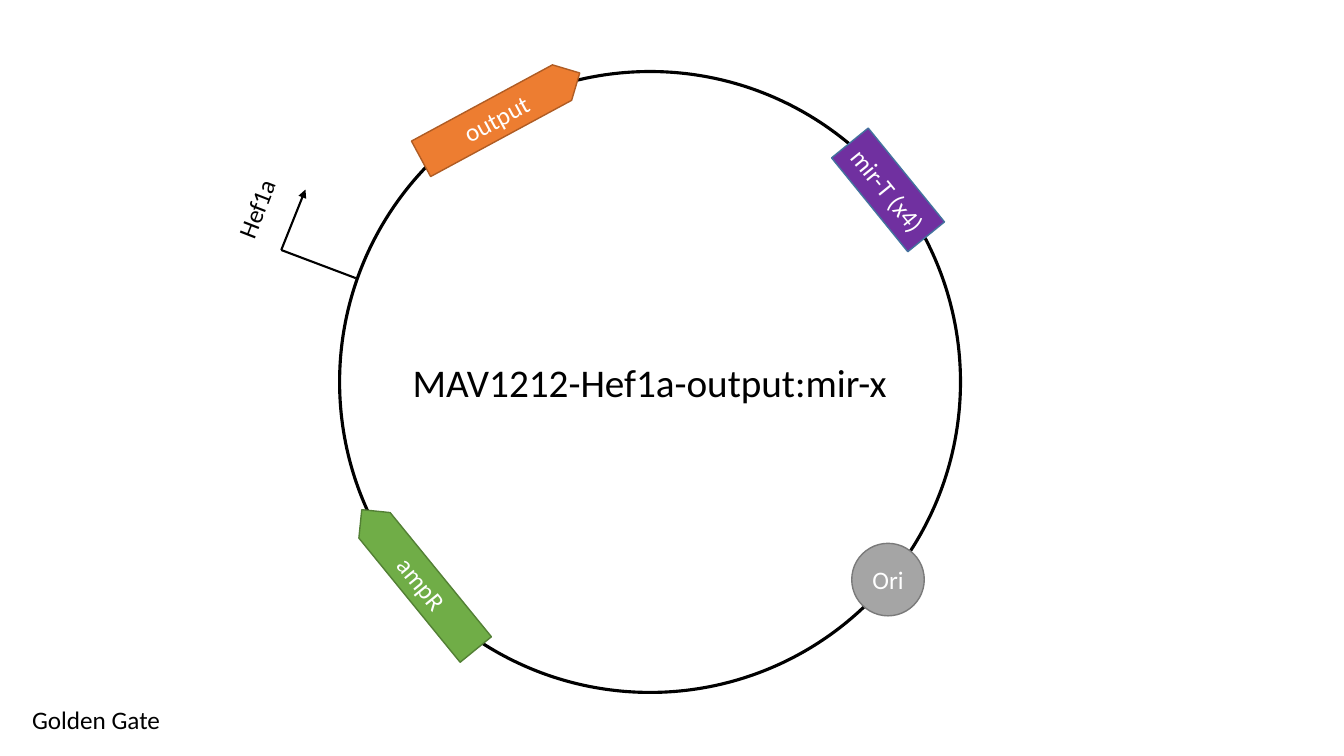
from lxml.etree import SubElement as Sub
from pptx import Presentation
from pptx.dml.color import RGBColor
from pptx.enum.shapes import MSO_CONNECTOR as Conn, MSO_SHAPE as Kind
from pptx.enum.text import MSO_ANCHOR as Anchor, PP_ALIGN as Align
from pptx.oxml.ns import qn
from pptx.util import Pt

BLACK = RGBColor(0x00, 0x00, 0x00)
WHITE = RGBColor(0xFF, 0xFF, 0xFF)
GREEN = RGBColor(0x70, 0xAD, 0x47)
MOSS = RGBColor(0x53, 0x80, 0x35)
GRAY = RGBColor(0xA5, 0xA5, 0xA5)
SLATE = RGBColor(0x7A, 0x7A, 0x7A)
ORANGE = RGBColor(0xED, 0x7D, 0x31)
RUST = RGBColor(0xAF, 0x5C, 0x24)
PURPLE = RGBColor(0x70, 0x30, 0xA0)
BLUE = RGBColor(0x43, 0x73, 0x9E)
GENE = (128.9, 28.8)


def write(frame, text, size=18, color=BLACK, align=Align.CENTER):
    """Put one formatted line of text in a frame."""
    frame.word_wrap = True
    par = frame.paragraphs[0]
    par.alignment = align
    run = par.add_run()
    run.text = text
    run.font.name = "Calibri"
    run.font.size = Pt(size)
    run.font.color.rgb = color


def label(slide, text, left, top, width, height, turn=0, **form):
    """Add a text box that may be turned."""
    box = slide.shapes.add_textbox(Pt(left), Pt(top), Pt(width), Pt(height))
    box.rotation = turn
    write(box.text_frame, text, **form)


def shape(slide, kind, left, top, size, edge, weight=1, fill=None, turn=0):
    """Add an outlined shape, left hollow unless a fill is given."""
    width, height = size
    item = slide.shapes.add_shape(kind, Pt(left), Pt(top), Pt(width), Pt(height))
    item.shadow.inherit = False
    item.rotation = turn
    item.line.color.rgb = edge
    item.line.width = Pt(weight)
    if fill is None:
        item.fill.background()
    else:
        item.fill.solid()
        item.fill.fore_color.rgb = fill
    return item


def part(slide, text, kind, left, top, size, fill, edge, turn=0, flip=False):
    """Add a named part of the plasmid."""
    item = shape(slide, kind, left, top, size, edge, fill=fill, turn=turn)
    if flip:
        item.element.spPr.find(qn("a:xfrm")).set("flipH", "1")
    item.text_frame.vertical_anchor = Anchor.MIDDLE
    write(item.text_frame, text, color=WHITE)


def line(slide, start, end, arrow=False):
    """Add a straight black line, with an arrowhead at its end on request."""
    link = slide.shapes.add_connector(Conn.STRAIGHT, *map(Pt, start + end))
    link.line.color.rgb = BLACK
    link.line.width = Pt(1.5)
    props = link.element.spPr
    if arrow:
        Sub(props.find(qn("a:ln")), qn("a:tailEnd"), type="triangle")
    Sub(props, qn("a:effectLst"))


def main():
    """Build the plasmid map and save it."""
    deck = Presentation()
    deck.slide_width, deck.slide_height = Pt(960), Pt(540)
    slide = deck.slides.add_slide(deck.slide_layouts[6])

    shape(slide, Kind.OVAL, 242.6, 51.1, (443.5, 443.5), BLACK, weight=2.25)
    part(slide, "ampR", Kind.PENTAGON, 234.7, 399.6, GENE, GREEN, MOSS,
         turn=50.8, flip=True)
    part(slide, "Ori", Kind.OVAL, 608.4, 388.1, (51.8, 51.8), GRAY, SLATE)
    label(slide, "MAV1212-Hef1a-output:mir-x", 267.1, 252.7, 393.8, 41, size=28)
    part(slide, "output", Kind.PENTAGON, 293, 68.4, GENE, ORANGE, RUST, turn=331.6)

    bend = (200.9, 178.6)
    line(slide, bend, (218.2, 135.4), arrow=True)
    line(slide, bend, (254.2, 198.7))
    label(slide, "Hef1a", 103.7, 134.6, 158.4, 28.8, turn=291.3)

    part(slide, "mir-T (x4)", Kind.RECTANGLE, 591.1, 118.8, (86.4, 33.8),
         PURPLE, BLUE, turn=50.9)
    label(slide, "Golden Gate", 15.8, 499.7, 238.3, 28.8, align=Align.LEFT)
    deck.save("out.pptx")


if __name__ == "__main__":
    main()
